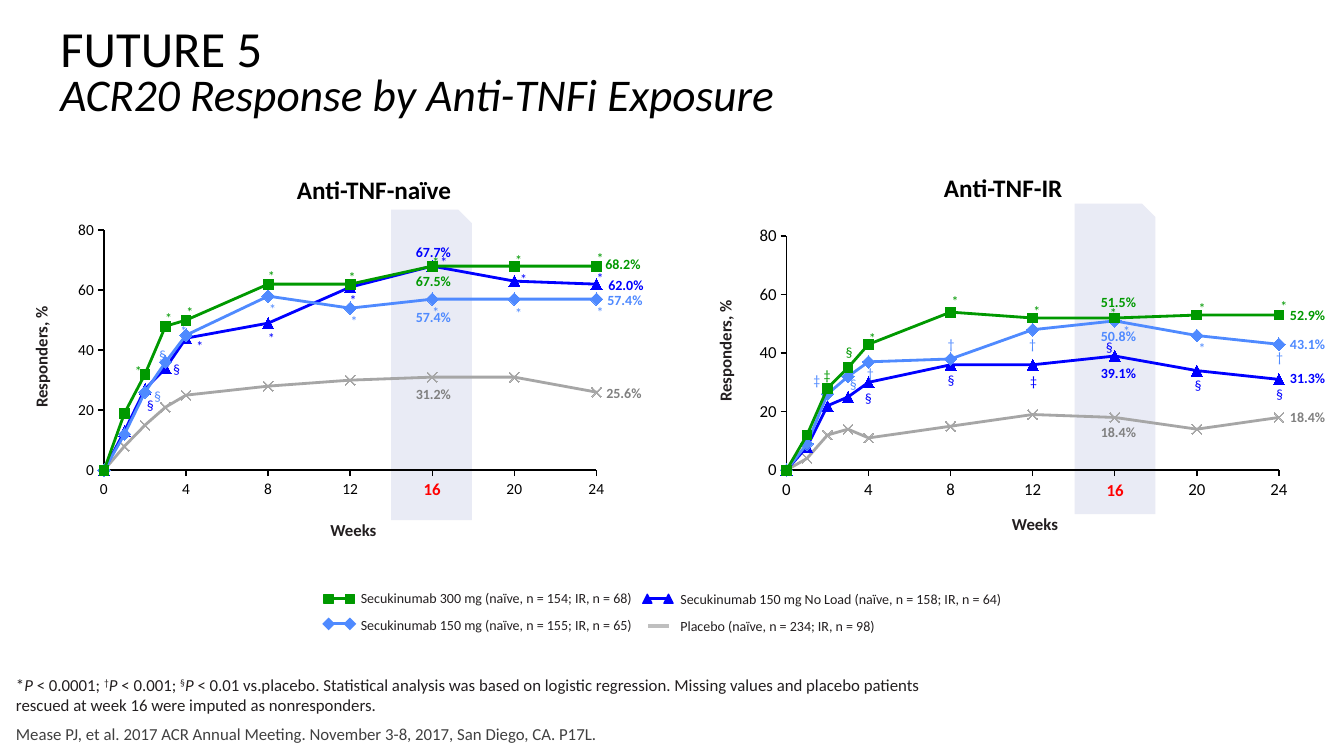
from dataclasses import dataclass
from typing import Any, NamedTuple

from lxml import etree
from pptx import Presentation
from pptx import util as u
from pptx.chart import data as chart_data
from pptx.dml.color import RGBColor
from pptx.enum import chart as charts
from pptx.enum import shapes, text
from pptx.oxml import parse_xml
from pptx.oxml.ns import nsdecls, qn

CELL = 0.1  # the grid has 133.3 columns and 75 rows of a tenth of an inch


@dataclass(frozen=True)
class Theme:
    font: str = "Calibri"
    black: str = "000000"
    ink: str = "231F20"
    source: str = "404040"
    band: str = "E9EBF5"
    red: str = "FF0000"
    green: str = "009900"
    sky: str = "4F8AFF"
    blue: str = "0000FF"
    gray: str = "A6A6A6"
    pale: str = "BFBFBF"
    label: str = "808080"
    title: float = 36.1
    subtitle: float = 32.4
    heading: float = 18
    body: float = 12
    small: float = 10


THEME = Theme()
WEEKS = (0, 1, 2, 3, 4, 8, 12, 16, 20, 24)
STYLE = charts.XL_MARKER_STYLE
ARMS = ((THEME.green, STYLE.SQUARE, 7), (THEME.sky, STYLE.DIAMOND, 9),
        (THEME.blue, STYLE.TRIANGLE, 8), (THEME.gray, STYLE.X, 7))
ALIGN = text.PP_ALIGN
SHAPE = shapes.MSO_SHAPE


class Place(NamedTuple):
    left: float
    top: float
    width: float
    height: float


class Span(NamedTuple):
    words: str
    format: dict[str, Any] = {}


class Marks(NamedTuple):
    symbol: str
    color: str
    spots: tuple[tuple[float, float], ...]


class Label(NamedTuple):
    words: str
    color: str
    left: float
    top: float
    align: Any = ALIGN.RIGHT


@dataclass(frozen=True)
class Panel:
    heading: str
    heading_place: Place
    band: Place
    chart: Place
    plot: tuple[float, float, float, float]
    tick_size: float
    values: tuple[tuple[int, ...], ...]
    y_title: Place
    x_title: Place
    week_16: Place
    marks: tuple[Marks, ...]
    labels: tuple[Label, ...]


NAIVE = Panel(
    "Anti-TNF-naïve", Place(27.1, 16.8, 20, 4), Place(38.8, 20.8, 8, 30.8),
    Place(4.6, 18.9, 56.6, 32.5), (0.101, 0.121, 0.863, 0.733), 11,
    ((0, 19, 32, 48, 50, 62, 62, 68, 68, 68), (0, 12, 26, 36, 45, 58, 54, 57, 57, 57),
     (0, 13, 27, 34, 44, 49, 61, 68, 63, 62), (0, 8, 15, 21, 25, 28, 30, 31, 31, 26)),
    Place(-7.5, 33.9, 23.1, 3), Place(10.6, 51.6, 48.9, 2), Place(41.5, 47.5, 2.7, 2.9),
    (Marks("*", THEME.green, ((12.4, 35.5), (15.4, 30.2), (17.5, 29.6), (25.6, 26), (33.6, 26.1),
                              (41.9, 24.7), (50.1, 24.5), (58.2, 24.3))),
     Marks("*", THEME.sky, ((16.9, 31.5), (25.7, 29.3), (33.8, 30.5), (41.9, 29.6),
                            (50.1, 29.7), (58.2, 29.6))),
     Marks("*", THEME.blue, ((18.5, 33), (25.6, 32.2), (33.7, 28.4), (42.7, 24.7),
                             (50.6, 26.3), (58.2, 26.2))),
     Marks("§", THEME.sky, ((14.8, 33.9), (14.3, 38))),
     Marks("§", THEME.blue, ((16.2, 35.3), (13.6, 38.8)))),
    (Label("68.2%", THEME.green, 58.5, 24.9), Label("62.0%", THEME.blue, 58.8, 26.9),
     Label("57.4%", THEME.sky, 58.7, 28.4), Label("25.6%", THEME.label, 58.6, 37.7),
     Label("67.7%", THEME.blue, 39.7, 23.7), Label("67.5%", THEME.green, 39.7, 26.5),
     Label("57.4%", THEME.sky, 39.7, 30.1), Label("31.2%", THEME.label, 39.7, 37.8)))

IR = Panel(
    "Anti-TNF-IR", Place(91.9, 16.6, 15.2, 4), Place(106.6, 20.2, 8, 30.8),
    Place(62.8, 19.6, 68.8, 32.4), (0.221, 0.118, 0.71, 0.717), 12,
    ((0, 12, 28, 35, 43, 54, 52, 52, 53, 53), (0, 9, 26, 32, 37, 38, 48, 51, 46, 43),
     (0, 8, 22, 25, 30, 36, 36, 39, 34, 31), (0, 4, 12, 14, 11, 15, 19, 18, 14, 18)),
    Place(60.4, 33.3, 23, 3), Place(78.2, 51, 48.9, 2), Place(109.6, 47.6, 2, 2.9),
    (Marks("*", THEME.green, ((85.2, 32.2), (93.4, 28.5), (101.5, 29.5), (109.1, 29.7),
                              (117.9, 29.2), (126, 29))),
     Marks("*", THEME.sky, ((110.4, 31.5), (117.9, 33.2))),
     Marks("†", THEME.sky, ((85, 35.7), (93, 32.8), (101.1, 32.8), (125.6, 34.1))),
     Marks("‡", THEME.green, ((80.7, 35.9),)), Marks("‡", THEME.sky, ((79.7, 36.4),)),
     Marks("‡", THEME.blue, ((101.2, 36.5),)), Marks("§", THEME.green, ((82.9, 33.6),)),
     Marks("§", THEME.sky, ((83.3, 36.8),)),
     Marks("§", THEME.blue, ((84.8, 38.2), (93, 36.4), (108.7, 33.1), (117.5, 36.9),
                             (125.6, 37.8)))),
    (Label("52.9%", THEME.green, 126.4, 29.9), Label("43.1%", THEME.sky, 126.4, 32.8),
     Label("31.3%", THEME.blue, 126.4, 36.2), Label("18.4%", THEME.label, 126.4, 40),
     Label("51.5%", THEME.green, 108.2, 28.6, ALIGN.LEFT),
     Label("50.8%", THEME.sky, 108.2, 32, ALIGN.LEFT),
     Label("39.1%", THEME.blue, 108.2, 35.7, ALIGN.LEFT),
     Label("18.4%", THEME.label, 108.2, 41.5, ALIGN.LEFT)))


def grid(*cells: float) -> list[int]:
    return [u.Inches(cell * CELL) for cell in cells]


def rgb(color: str) -> RGBColor:
    return RGBColor.from_string(color)


def style(font: Any, size: float, color: str, **extra: Any) -> None:
    for name, value in {"name": THEME.font, "size": u.Pt(size), **extra}.items():
        setattr(font, name, value)
    font.color.rgb = rgb(color)


def stroke(line: Any, color: str, width: float) -> None:
    line.color.rgb = rgb(color)
    line.width = u.Pt(width)


def add_text(page: Any, place: Place, paras: list[list[Span]], size: float, color: str,
             frame: dict[str, Any] = {}, layout: dict[str, Any] = {}, bold: bool = False,
             gap: float = 0) -> Any:
    box = page.shapes.add_textbox(*grid(*place))
    for name, value in {"word_wrap": True, **frame}.items():
        setattr(box.text_frame, name, value)
    for number, spans in enumerate(paras):
        para = box.text_frame.add_paragraph() if number else box.text_frame.paragraphs[0]
        for name, value in {**layout, **({"space_before": u.Pt(gap)} if number else {})}.items():
            setattr(para, name, value)
        for words, extra in spans:
            span = para.add_run()
            span.text = words
            raised = extra.get("raised", False)
            style(span.font, size, color, bold=bold, italic=extra.get("italic", False))
            if raised:
                span.font._element.set("baseline", "30000")
    return box


def add_block(page: Any, kind: Any, place: Place, color: str, outline: float = 0) -> Any:
    block = page.shapes.add_shape(kind, *grid(*place))
    block.shadow.inherit = False
    block.fill.solid()
    block.fill.fore_color.rgb = rgb(color)
    if outline:
        stroke(block.line, color, outline)
    else:
        block.line.fill.background()
    return block


def add_chart(page: Any, panel: Panel) -> None:
    data = chart_data.XyChartData()
    for number, values in enumerate(panel.values, 1):
        series = data.add_series(f"Series {number}")
        for week, value in zip(WEEKS, values):
            series.add_data_point(week, value)
    chart = page.shapes.add_chart(charts.XL_CHART_TYPE.XY_SCATTER_LINES,
                                  *grid(*panel.chart), data).chart
    chart.has_legend = chart.has_title = False
    style(chart.font, panel.tick_size, THEME.black)
    for axis, top, step in ((chart.category_axis, 24, 4), (chart.value_axis, 80, 20)):
        for name, value in {"minimum_scale": 0, "maximum_scale": top, "major_unit": step,
                            "has_major_gridlines": False, "has_title": False,
                            "major_tick_mark": charts.XL_TICK_MARK.OUTSIDE}.items():
            setattr(axis, name, value)
        stroke(axis.format.line, THEME.black, 1)
        style(axis.tick_labels.font, panel.tick_size, THEME.black)
    chart.plots[0].vary_by_categories = False
    for series, (color, marker, size) in zip(chart.plots[0].series, ARMS):
        series.smooth = False
        stroke(series.format.line, color, 2)
        series.marker.style, series.marker.size = marker, size
        stroke(series.marker.format.line, color, 0.75)
        if marker == STYLE.X:
            series.marker.format.fill.background()
        else:
            series.marker.format.fill.solid()
            series.marker.format.fill.fore_color.rgb = rgb(color)
    # Fixed plot area and clear backgrounds, so the band shows through
    space = chart._chartSpace
    area = space.find(".//" + qn("c:plotArea"))
    for old in area.findall(qn("c:layout")):
        area.remove(old)
    sizes = "".join(f'<c:{tag} val="{share}"/>' for tag, share in zip("xywh", panel.plot))
    area.insert(0, parse_xml(
        f'<c:layout {nsdecls("c")}><c:manualLayout><c:layoutTarget val="inner"/>'
        f'<c:xMode val="edge"/><c:yMode val="edge"/>{sizes}</c:manualLayout></c:layout>'))
    clear = f'<c:spPr {nsdecls("c", "a")}><a:noFill/><a:ln><a:noFill/></a:ln></c:spPr>'
    area.append(parse_xml(clear))
    space.find(qn("c:txPr")).addprevious(parse_xml(clear))


def add_panel(page: Any, panel: Panel) -> None:
    centre = {"alignment": ALIGN.CENTER}
    flush = dict.fromkeys(("margin_left", "margin_right", "margin_top", "margin_bottom"), 0)
    add_block(page, SHAPE.SNIP_1_RECTANGLE, panel.band, THEME.band)
    add_chart(page, panel)
    add_text(page, panel.heading_place, [[Span(panel.heading)]], THEME.heading, THEME.black,
             layout=centre, bold=True)
    y_title = add_text(page, panel.y_title, [[Span("Responders, %")]], THEME.body, THEME.ink,
                       {"vertical_anchor": text.MSO_ANCHOR.BOTTOM}, centre, True)
    y_title.rotation = 270
    add_text(page, panel.x_title, [[Span("Weeks")]], THEME.body, THEME.ink, flush, centre, True)
    for symbol, color, spots in panel.marks:
        for left, top in spots:
            add_text(page, Place(left, top, 2.7, 2.7), [[Span(symbol)]], THEME.small, color,
                     {"word_wrap": False})
    for words, color, left, top, align in panel.labels:
        add_text(page, Place(left, top, 6, 2.7), [[Span(words)]], THEME.small, color,
                 layout={"alignment": align}, bold=True)
    week = add_block(page, SHAPE.RECTANGLE, panel.week_16, THEME.band)
    for name, value in {**flush, "margin_bottom": u.Inches(0.09), "word_wrap": True}.items():
        setattr(week.text_frame, name, value)
    para = week.text_frame.paragraphs[0]
    para.text, para.alignment = "16", ALIGN.CENTER
    style(para.runs[0].font, THEME.body, THEME.red, bold=True)


def add_legend(page: Any) -> None:
    for place, lines in (
            (Place(66.5, 58.1, 34.7, 5.4), ("Secukinumab 150 mg No Load (naïve, n = 158; IR, n = 64)",
                                            "Placebo (naïve, n = 234; IR, n = 98)")),
            (Place(34.8, 58, 29.9, 5.4), ("Secukinumab 300 mg (naïve, n = 154; IR, n = 68)",
                                          "Secukinumab 150 mg (naïve, n = 155; IR, n = 65)"))):
        add_text(page, place, [[Span(line)] for line in lines], THEME.small, THEME.ink, gap=7.3)
    for kind, color, left, middle, outline, turn in (
            (SHAPE.ISOSCELES_TRIANGLE, THEME.blue, 64.2, 59.4, 1, 0),
            (SHAPE.RECTANGLE, THEME.sky, 32.6, 61.9, 0, 45),
            (SHAPE.RECTANGLE, THEME.green, 32.6, 59.4, 1, 0),
            (None, THEME.pale, 64.3, 62.1, 0, 0)):
        for end in (left, left + 2.1) if kind else ():
            add_block(page, kind, Place(end - 0.45, middle - 0.45, 0.9, 0.9), color,
                      outline).rotation = turn
        line = page.shapes.add_connector(shapes.MSO_CONNECTOR.STRAIGHT,
                                         *grid(left, middle, left + 2.1, middle))
        stroke(line.line, color, 2.25)
        etree.SubElement(line._element.spPr, qn("a:effectLst"))


def main() -> None:
    deck = Presentation()
    deck.slide_width, deck.slide_height = grid(133.3, 75)
    page = deck.slides.add_slide(deck.slide_layouts[5])

    # Title
    title = page.shapes.title
    title.left, title.top, title.width, title.height = grid(5, 2, 106.9, 10.8)
    frame = title.text_frame
    frame.text = "FUTURE 5\nACR20 Response by Anti-TNFi Exposure"
    frame.auto_size, frame.vertical_anchor = text.MSO_AUTO_SIZE.NONE, text.MSO_ANCHOR.MIDDLE
    for para, size, italic in zip(frame.paragraphs, (THEME.title, THEME.subtitle), (False, True)):
        para.alignment, para.line_spacing = ALIGN.LEFT, 0.8
        style(para.runs[0].font, size, THEME.black, italic=italic)

    # Charts and legend
    for panel in (NAIVE, IR):
        add_panel(page, panel)
    add_legend(page)

    # Footnote and source
    bottom = {"vertical_anchor": text.MSO_ANCHOR.BOTTOM}
    letter, high = Span("P", {"italic": True}), {"raised": True}
    add_text(page, Place(0.6, 66.3, 93.8, 5.1), [[
        Span("*"), letter, Span(" < 0.0001; "), Span("†", high), letter, Span(" < 0.001; "),
        Span("§", high), letter,
        Span(" < 0.01 vs.placebo. Statistical analysis was based on logistic regression. Missing "
             "values and placebo patients rescued at week 16 were imputed as nonresponders.")]],
        THEME.body, THEME.ink, bottom)
    add_text(page, Place(0.6, 71.3, 66.3, 3), [[Span(
        "Mease PJ, et al. 2017 ACR Annual Meeting. November 3-8, 2017, San Diego, CA. P17L.")]],
        THEME.body, THEME.source, bottom)
    deck.save("out.pptx")


if __name__ == "__main__":
    main()
